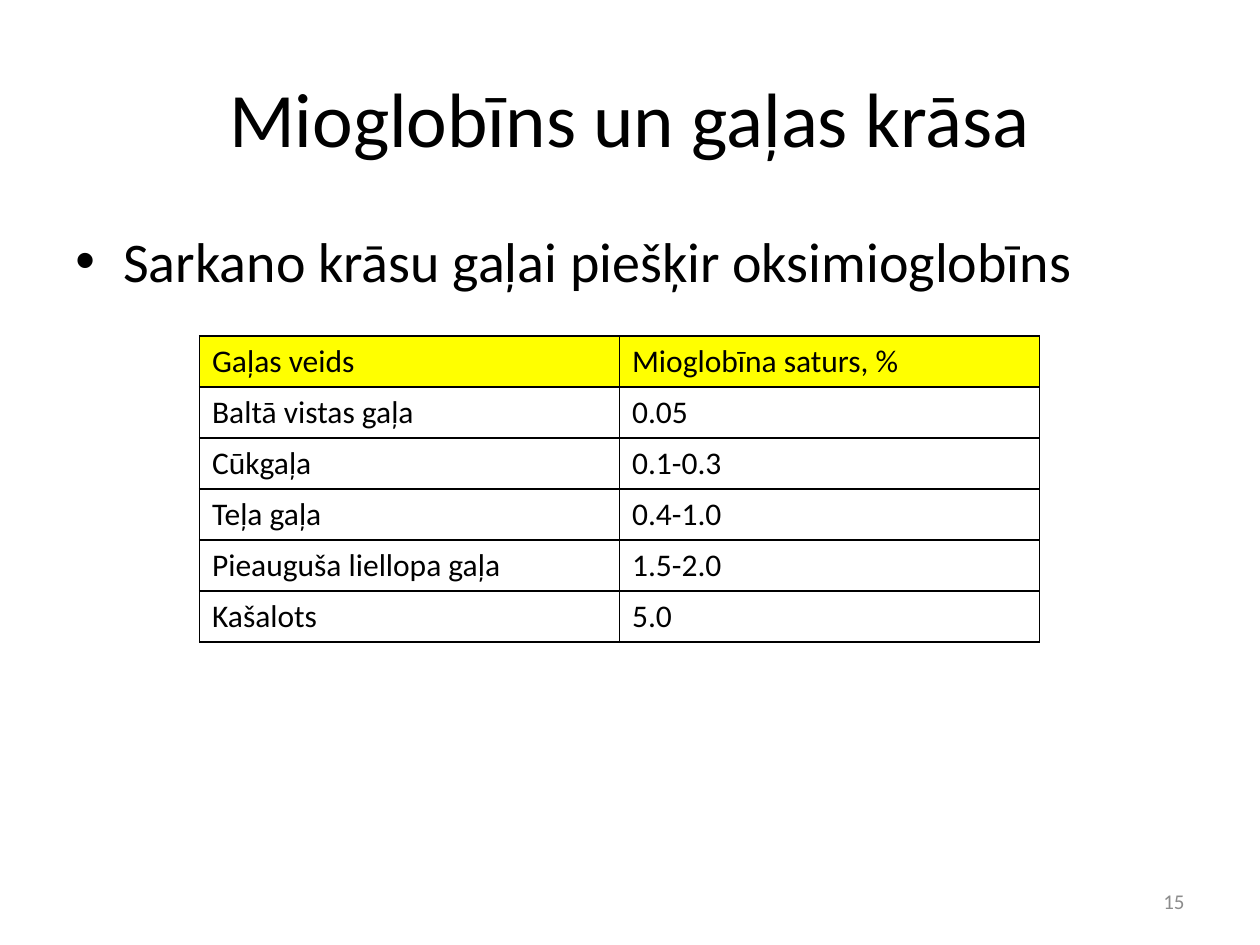
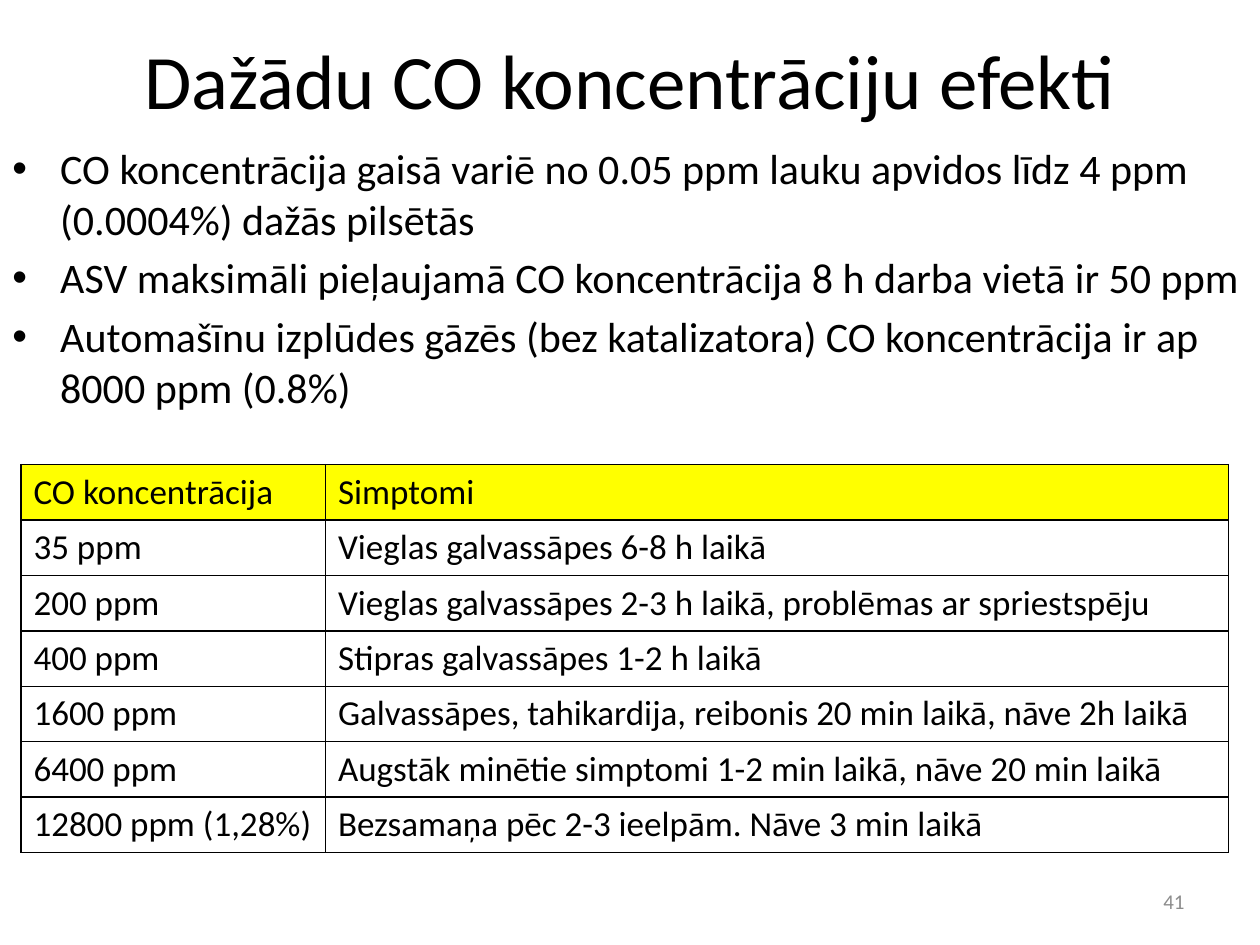
from pptx import Presentation
from pptx.dml.color import RGBColor
from pptx.enum.text import MSO_ANCHOR as Anchor, PP_ALIGN as Align
from pptx.oxml import parse_xml
from pptx.oxml.ns import nsdecls
from pptx.util import Inches, Pt

INK, GREY, HEAD = "000000", "8C8C8C", "FFFF00"
FONT = "Calibri"

deck = Presentation()
deck.slide_width, deck.slide_height = Inches(10), Inches(7.5)
col, row = deck.slide_width / 120, deck.slide_height / 90


def hue(code):
    return RGBColor.from_string(code)


def write(frame, lines, size, color=INK, align=Align.LEFT, bullet=False):
    frame.word_wrap = True
    for n, line in enumerate(lines):
        para = frame.paragraphs[0] if n == 0 else frame.add_paragraph()
        para.text = line
        para.alignment = align
        if bullet:
            props = para._p.get_or_add_pPr()
            props.set("marL", str(Inches(0.38)))
            props.set("indent", str(-Inches(0.38)))
            for tag in ('buFont {} typeface="Arial"', 'buChar {} char="•"'):
                props.append(parse_xml(f"<a:{tag.format(nsdecls('a'))}/>"))
            if n:
                para.space_before = Pt(size * 0.2)
        para.font.name, para.font.size = FONT, Pt(size)
        para.font.color.rgb = hue(color)


pages = [
    dict(
        title="Mioglobīns un gaļas krāsa", top=3.6, page="15",
        body=(6, 21, 108, 59.4), size=32,
        points=["Sarkano krāsu gaļai piešķir oksimioglobīns"],
        place=(19, 32), cols=(40, 40), step=4.86, text=18,
        cells=[
            ("Gaļas veids", "Mioglobīna saturs, %"),
            ("Baltā vistas gaļa", "0.05"),
            ("Cūkgaļa", "0.1-0.3"),
            ("Teļa gaļa", "0.4-1.0"),
            ("Pieauguša liellopa gaļa", "1.5-2.0"),
            ("Kašalots", "5.0"),
        ],
    ),
    dict(
        title="Dažādu CO koncentrāciju efekti", top=0, page="41",
        body=(0, 13, 120, 18), size=24,
        points=[
            "CO koncentrācija gaisā variē no 0.05 ppm lauku apvidos līdz 4 ppm (0.0004%) dažās pilsētās",
            "ASV maksimāli pieļaujamā CO koncentrācija 8 h darba vietā ir 50 ppm",
            "Automašīnu izplūdes gāzēs (bez katalizatora) CO koncentrācija ir ap 8000 ppm (0.8%)",
        ],
        place=(2, 44.25), cols=(29, 86), step=5.28, text=20,
        cells=[
            ("CO koncentrācija", "Simptomi"),
            ("35 ppm", "Vieglas galvassāpes 6-8 h laikā"),
            ("200 ppm", "Vieglas galvassāpes 2-3 h laikā, problēmas ar spriestspēju"),
            ("400 ppm", "Stipras galvassāpes 1-2 h laikā"),
            ("1600 ppm", "Galvassāpes, tahikardija, reibonis 20 min laikā, nāve 2h laikā"),
            ("6400 ppm", "Augstāk minētie simptomi 1-2 min laikā, nāve 20 min laikā"),
            ("12800 ppm (1,28%)", "Bezsamaņa pēc 2-3 ieelpām. Nāve 3 min laikā"),
        ],
    ),
]

for page in pages:
    slide = deck.slides.add_slide(deck.slide_layouts[6])

    texts = [
        ((6, page["top"], 108, 15), Anchor.MIDDLE,
         ([page["title"]], 44, INK, Align.CENTER)),
        (page["body"], Anchor.TOP,
         (page["points"], page["size"], INK, Align.LEFT, True)),
        ((86, 83.4, 28, 4.8), Anchor.MIDDLE,
         ([page["page"]], 12, GREY, Align.RIGHT)),
    ]
    for (x, y, w, h), anchor, style in texts:
        box = slide.shapes.add_textbox(
            int(x * col), int(y * row), int(w * col), int(h * row))
        box.text_frame.vertical_anchor = anchor
        write(box.text_frame, *style)

    cells, (x, y) = page["cells"], page["place"]
    table = slide.shapes.add_table(
        len(cells), 2, int(x * col), int(y * row),
        int(sum(page["cols"]) * col), int(len(cells) * page["step"] * row)).table
    table.first_row = table.horz_banding = False
    for c, width in enumerate(page["cols"]):
        table.columns[c].width = int(width * col)
    for r, line in enumerate(cells):
        table.rows[r].height = int(page["step"] * row)
        for c, words in enumerate(line):
            cell = table.cell(r, c)
            write(cell.text_frame, [words], page["text"])
            if r == 0:
                cell.fill.solid()
                cell.fill.fore_color.rgb = hue(HEAD)
            else:
                cell.fill.background()
            for n, side in enumerate("LRTB"):
                cell._tc.get_or_add_tcPr().insert(n, parse_xml(
                    f'<a:ln{side} {nsdecls("a")} w="{Pt(1)}"><a:solidFill>'
                    f'<a:srgbClr val="{INK}"/></a:solidFill></a:ln{side}>'))

deck.save("out.pptx")
